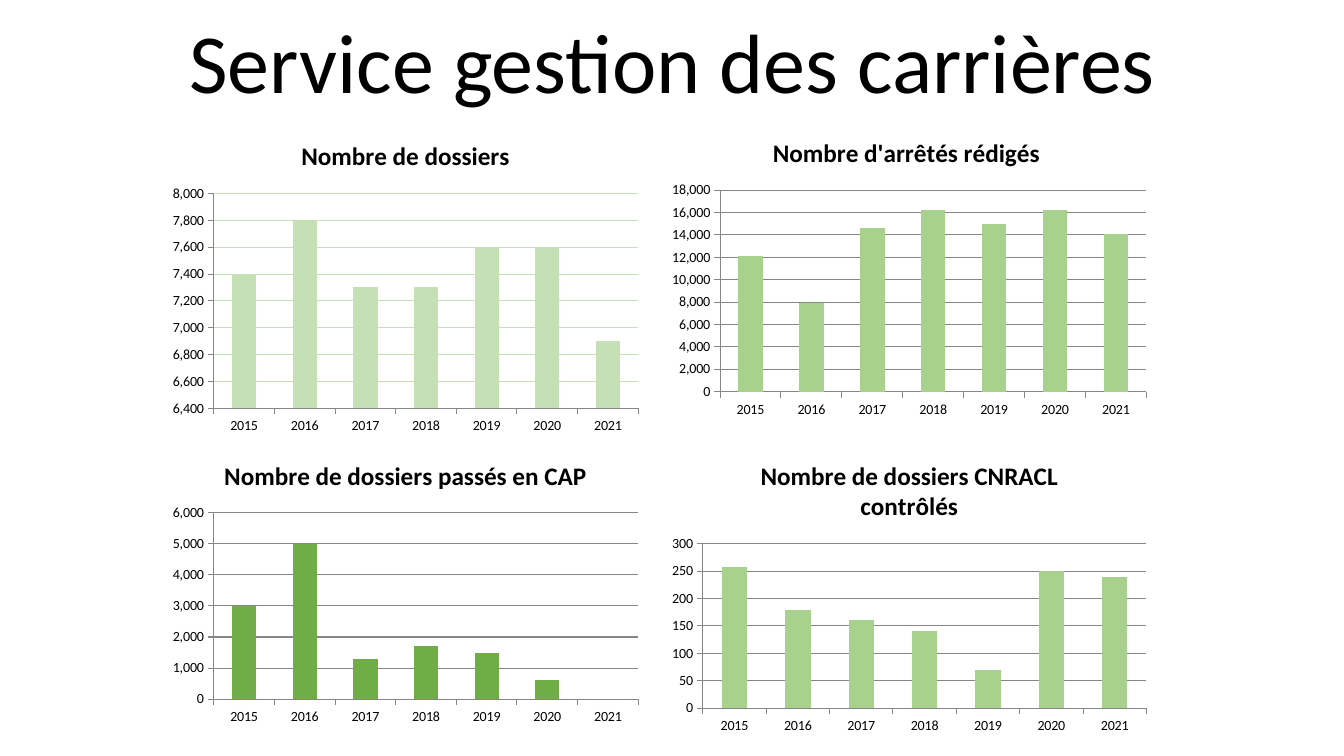
import pptx
import pptx.chart.data
import pptx.dml.color
import pptx.enum.chart
import pptx.enum.text
import pptx.util

Cm = pptx.util.Cm
Pt = pptx.util.Pt

FONT = "Calibri"
HEX = {"text": "000000", "axis": "868686", "pale": "C5E0B4",
       "light": "A9D18E", "green": "70AD47"}
YEARS = [str(year) for year in range(2015, 2022)]
LEFT, RIGHT = (4.11, 12.22), (16.69, 12.45)  # left edge and width, cm

# title, series name, values, fill, grid, (low, high, step), format, box in cm
CHARTS = [
    ("Nombre de dossiers", "Nombre de dossiers",
     [7400, 7800, 7300, 7300, 7600, 7600, 6900], "pale", "pale",
     (6400, 8000, 200), "#,##0", (LEFT, 3.07, 8.03)),
    ("Nombre d'arrêtés rédigés ", "Series 1",
     [12100, 7900, 14600, 16200, 15000, 16200, 14100], "light", "axis",
     (0, 18000, 2000), "#,##0", (RIGHT, 3.0, 7.67)),
    ("Nombre de dossiers passés en CAP", "Nombre de dossiers passés en CAP",
     [3000, 5000, 1300, 1700, 1500, 600, 0], "green", "axis",
     (0, 6000, 1000), "#,##0", (LEFT, 11.15, 7.26)),
    ("Nombre de dossiers CNRACL contrôlés", "Nombre de dossiers CNRACL contrôlés",
     [258, 178, 161, 140, 70, 250, 240], "light", "axis",
     (0, 300, 50), "General", (RIGHT, 11.15, 7.49)),
]


def rgb(name):
    return pptx.dml.color.RGBColor.from_string(HEX[name])


def style(font, size, bold=False):
    font.name = FONT
    font.size = Pt(size)
    font.bold = bold
    font.color.rgb = rgb("text")


def rule(line, color):
    line.color.rgb = rgb(color)
    line.width = Pt(0.75)


def head(slide, text, left, top, width, height):
    title = slide.shapes.title
    title.left, title.top = Cm(left), Cm(top)
    title.width, title.height = Cm(width), Cm(height)
    frame = title.text_frame
    frame.word_wrap = True
    frame.auto_size = pptx.enum.text.MSO_AUTO_SIZE.NONE
    frame.vertical_anchor = pptx.enum.text.MSO_ANCHOR.MIDDLE
    par = frame.paragraphs[0]
    par.alignment = pptx.enum.text.PP_ALIGN.CENTER
    par.line_spacing = 0.9
    run = par.add_run()
    run.text = text
    style(run.font, 60)


def bars(slide, title, name, values, fill, grid, scale, form, box):
    (left, width), top, height = box
    data = pptx.chart.data.CategoryChartData(number_format=form)
    data.categories = YEARS
    data.add_series(name, values)
    chart = slide.shapes.add_chart(
        pptx.enum.chart.XL_CHART_TYPE.COLUMN_CLUSTERED,
        Cm(left), Cm(top), Cm(width), Cm(height), data).chart
    style(chart.font, 10)
    chart.has_legend = False
    chart.has_title = True
    run = chart.chart_title.text_frame.paragraphs[0].add_run()
    run.text = title
    style(run.font, 18, True)
    chart.chart_title.include_in_layout = False

    plot = chart.plots[0]
    plot.gap_width = 150
    plot.vary_by_categories = False
    paint = plot.series[0].format.fill
    paint.solid()
    paint.fore_color.rgb = rgb(fill)

    for axis in (chart.category_axis, chart.value_axis):
        axis.major_tick_mark = pptx.enum.chart.XL_TICK_MARK.OUTSIDE
        rule(axis.format.line, "axis")
    axis = chart.value_axis
    axis.minimum_scale, axis.maximum_scale, axis.major_unit = scale
    axis.tick_labels.number_format = form
    axis.tick_labels.number_format_is_linked = False
    axis.has_major_gridlines = True
    rule(axis.major_gridlines.format.line, grid)


def main():
    deck = pptx.Presentation()
    deck.slide_width, deck.slide_height = Cm(33.87), Cm(19.05)
    slide = deck.slides.add_slide(deck.slide_layouts[5])
    head(slide, "Service gestion des carrières", 2.34, 0.33, 29.21, 2.67)
    for chart in CHARTS:
        bars(slide, *chart)
    deck.save("out.pptx")


if __name__ == "__main__":
    main()
